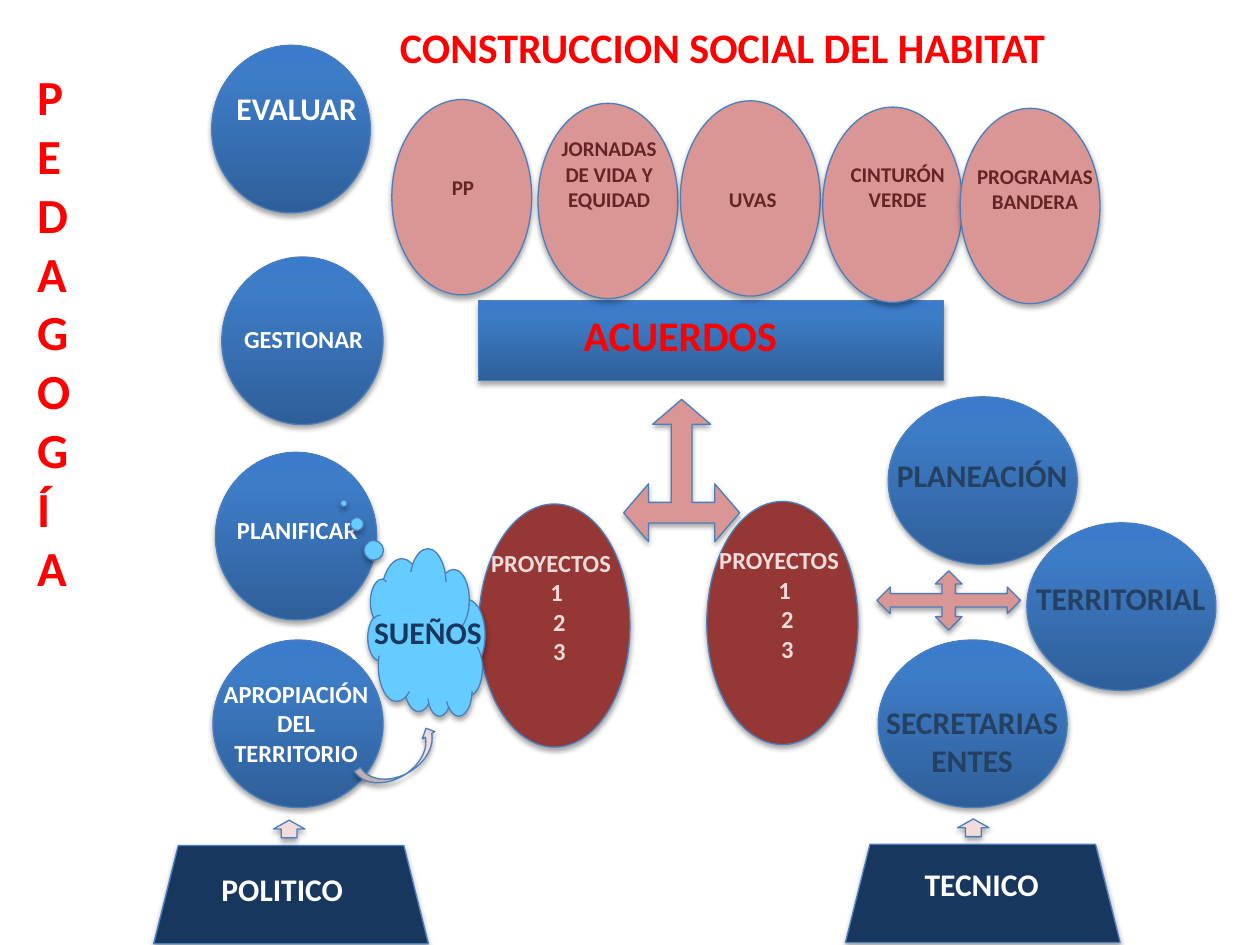
"""Builds the one-slide diagram of the social construction of habitat."""
import pptx
import pptx.dml.color
import pptx.enum.shapes
import pptx.enum.text
import pptx.oxml
import pptx.oxml.ns
import pptx.util

RGB = pptx.dml.color.RGBColor
SHAPE = pptx.enum.shapes.MSO_SHAPE
ALIGN = pptx.enum.text.PP_ALIGN
NS = pptx.oxml.ns.nsdecls("a")

RED = RGB(0xFF, 0x00, 0x00)
WHITE = RGB(0xFF, 0xFF, 0xFF)
NAVY = RGB(0x17, 0x37, 0x5E)
SLATE = RGB(0x25, 0x40, 0x61)
EDGE = RGB(0x4B, 0x7E, 0xBC)
PALE = RGB(0xF2, 0xDC, 0xDB)
ROSE = RGB(0xD9, 0x96, 0x94)
BRICK = RGB(0x95, 0x37, 0x35)
WINE = RGB(0x63, 0x25, 0x23)
SKY = RGB(0x66, 0xCC, 0xFF)
SHADOW = RGB(0x00, 0x00, 0x00)
BLUE = (270, [(0, RGB(0x2F, 0x5F, 0x99)), (80, RGB(0x3D, 0x7C, 0xC7)), (100, RGB(0x3A, 0x7C, 0xCB))])
BLUSH = (0, [(80, PALE), (100, RGB(0xA4, 0xC4, 0xFF))])

TITLE = "CONSTRUCCION SOCIAL DEL HABITAT"
PILLAR = "PEDAGOGÍA"
BASES = [
    ("POLITICO", (1.22, 6.71), (1.66, 6.86), (2.17, 6.51)),
    ("TECNICO", (6.71, 6.7), (7.24, 6.82), (7.6, 6.5)),
]
ACTORS = [
    ("PLANEACIÓN", (7.05, 3.15), 3.57, 0.4),
    ("SECRETARIAS ENTES", (6.97, 5.08), 5.53, 0.71),
    ("TERRITORIAL", (8.15, 4.15), 4.55, 0.4),
]
PROJECTS = ["PROYECTOS", "1 ", "2", "3"]
PROJECT_SPOTS = [(5.61, 3.98), (3.8, 4)]
STEPS = [
    ("APROPIACIÓN DEL TERRITORIO", 14, (1.69, 5.08, 1.35), (1.66, 5.34, 1.38, 0.81)),
    ("PLANIFICAR", 14, (1.71, 3.59, 1.28), (1.61, 4.04, 1.5, 0.34)),
    ("GESTIONAR", 14, (1.76, 2.04, 1.28), (1.66, 2.52, 1.5, 0.34)),
    ("EVALUAR", 18, (1.68, 0.36, 1.26), (1.66, 0.66, 1.39, 0.4)),
]
PROGRAMMES = [
    ("PP", (3.11, 0.79), (3.11, 1.34), 0.3),
    ("JORNADAS DE VIDA Y EQUIDAD", (4.27, 0.82), (4.27, 1.03), 0.71),
    ("UVAS", (5.4, 0.8), (5.41, 1.43), 0.3),
    ("CINTURÓN VERDE", (6.53, 0.85), (6.56, 1.23), 0.5),
    ("PROGRAMAS BANDERA", (7.62, 0.86), (7.65, 1.25), 0.5),
]

prs = pptx.Presentation()
prs.slide_width = pptx.util.Inches(10)
prs.slide_height = pptx.util.Inches(7.5)
slide = prs.slides.add_slide(prs.slide_layouts[6])


def inches(box):
    return [pptx.util.Inches(v) for v in box]


def add_shape(kind, box, fill, adjust=(), flip=False, rotation=0):
    s = slide.shapes.add_shape(kind, *inches(box))
    props = s._element.spPr
    s.rotation = rotation
    for i, value in enumerate(adjust):
        s.adjustments[i] = value
    if flip:
        props.xfrm.set("flipV", "1")
    if isinstance(fill, RGB):
        s.fill.solid()
        s.fill.fore_color.rgb = fill
    else:
        angle, stops = fill
        s.fill.background()
        stop_xml = "".join(
            f'<a:gs pos="{pos * 1000}"><a:srgbClr val="{color}"/></a:gs>' for pos, color in stops)
        gradient = pptx.oxml.parse_xml(
            f'<a:gradFill {NS} rotWithShape="1"><a:gsLst>{stop_xml}</a:gsLst>'
            f'<a:lin ang="{angle * 60000}" scaled="0"/></a:gradFill>')
        props.replace(props.find(pptx.oxml.ns.qn("a:noFill")), gradient)
    s.line.color.rgb = EDGE
    s.line.width = pptx.util.Pt(0.75)
    s.shadow.inherit = False
    effects = props.find(pptx.oxml.ns.qn("a:effectLst"))
    effects.append(pptx.oxml.parse_xml(
        f'<a:outerShdw {NS} blurRad="{pptx.util.Pt(3.1)}" dist="{pptx.util.Pt(1.8)}" dir="5400000" '
        f'rotWithShape="0"><a:srgbClr val="{SHADOW}"><a:alpha val="35000"/></a:srgbClr></a:outerShdw>'))


def add_text(text, box, size=18, color=WHITE, align=ALIGN.CENTER, first_align=None):
    tf = slide.shapes.add_textbox(*inches(box)).text_frame
    tf.word_wrap = True
    lines = [text] if isinstance(text, str) else text
    for i, line in enumerate(lines):
        p = tf.add_paragraph() if i else tf.paragraphs[0]
        p.alignment = align if i or first_align is None else first_align
        r = p.add_run()
        r.text = line
        r.font.name = "Calibri"
        r.font.size = pptx.util.Pt(size)
        r.font.bold = True
        r.font.color.rgb = color


for label, base, spot, arrow in BASES:
    add_shape(SHAPE.TRAPEZOID, (*base, 2.18, 0.78), NAVY)
    add_text(label, (*spot, 1.33, 0.4), align=ALIGN.LEFT)
    add_shape(SHAPE.UP_ARROW, (*arrow, 0.25, 0.14), PALE)

for label, (left, top), text_top, height in ACTORS:
    add_shape(SHAPE.OVAL, (left, top, 1.5, 1.33), BLUE)
    add_text(label, (left - 0.13, text_top, 1.75, height), color=SLATE)
add_shape(SHAPE.QUAD_ARROW, (6.96, 4.53, 1.14, 0.47), ROSE)

for left, top in PROJECT_SPOTS:
    add_shape(SHAPE.OVAL, (left, top, 1.2, 1.93), BRICK)
    add_text(PROJECTS, (left, top + 0.3, 1.28, 1.31), size=14, color=PALE, first_align=ALIGN.LEFT)

for label, size, (left, top, width), text_box in STEPS:
    add_shape(SHAPE.OVAL, (left, top, width, 1.33), BLUE)
    add_text(label, text_box, size=size)

add_shape(SHAPE.CLOUD_CALLOUT, (2.92, 4.36, 0.93, 1.33), SKY, adjust=(-0.706, 0.775), flip=True)
add_text("SUEÑOS", (2.87, 4.82, 1.11, 0.4), color=NAVY, align=ALIGN.LEFT)
add_shape(SHAPE.CURVED_DOWN_ARROW, (2.82, 5.92, 0.72, 0.23), BLUSH, flip=True, rotation=329.2)

add_shape(SHAPE.LEFT_RIGHT_UP_ARROW, (4.95, 3.17, 0.92, 1.13), ROSE, adjust=(0.179, 0.25, 0.215))
add_shape(SHAPE.RECTANGLE, (3.8, 2.39, 3.69, 0.63), BLUE)
add_text("ACUERDOS", (4.27, 2.41, 2.26, 0.5), size=24, color=RED)
add_text(TITLE, (3.01, 0.12, 5.45, 0.5), size=24, color=RED)

for label, oval, spot, height in PROGRAMMES:
    add_shape(SHAPE.OVAL, (*oval, 1.11, 1.55), ROSE)
    add_text(label, (*spot, 1.13, height), size=12, color=WINE)

add_text(list(PILLAR), (0.2, 0.48, 0.75, 4.34), size=28, color=RED, align=ALIGN.LEFT)

prs.save("out.pptx")
